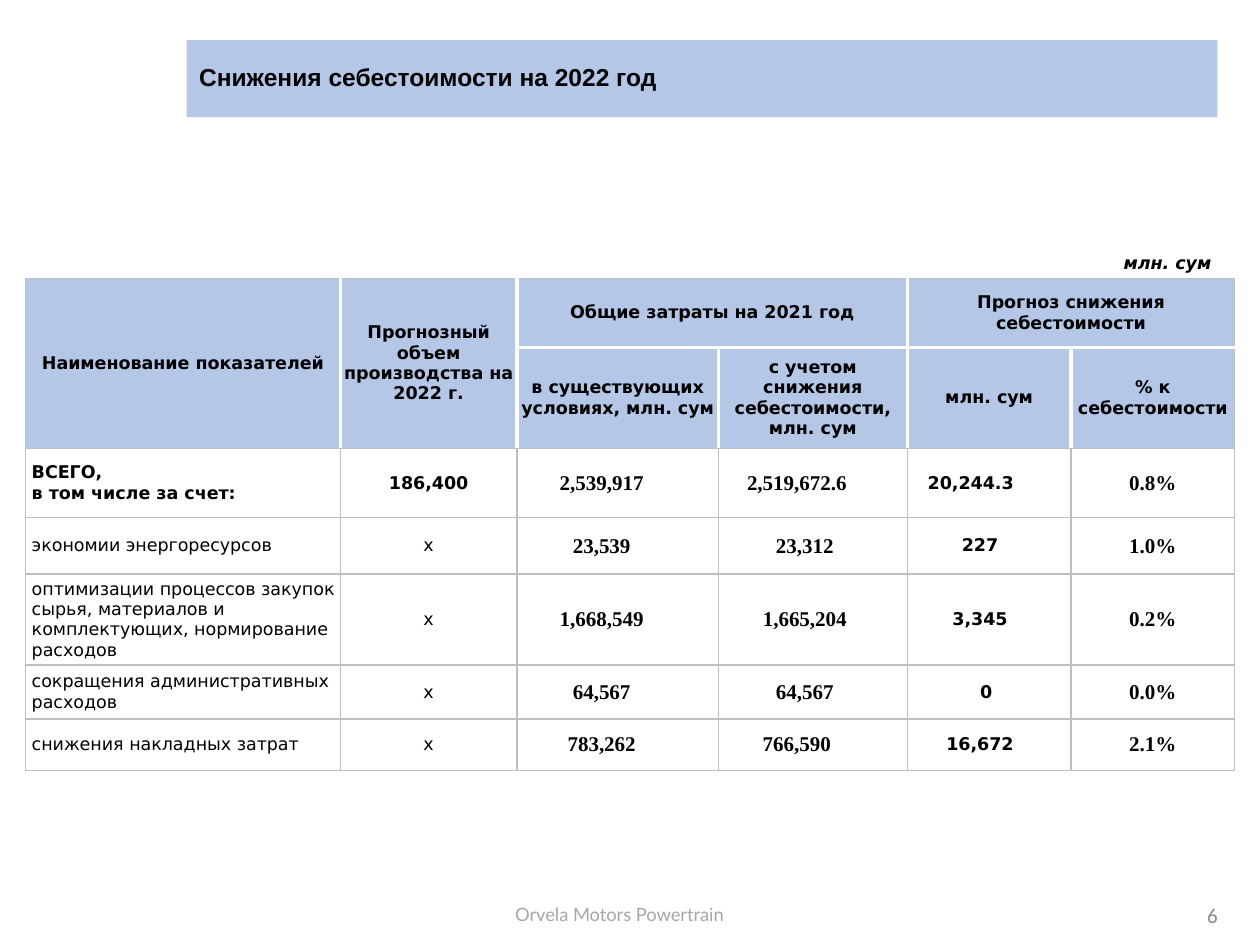
from pptx import Presentation
from pptx.dml.color import RGBColor
from pptx.enum.text import MSO_ANCHOR, MSO_AUTO_SIZE, PP_ALIGN as Align
from pptx.oxml.ns import qn
from pptx.util import Cm, Pt
from lxml.etree import SubElement

COLORS = {"header": "B4C7E7", "grid": "BFBFBF", "white": "FFFFFF",
          "text": "000000", "footer": "A6A6A6", "number": "8C8C8C"}
SANS, SERIF = "DejaVu Sans", "Times New Roman"
GRID, GAP = ("grid", 1), ("white", 2.25)

COLUMNS = [6.35, 3.56, 4.06, 3.81, 3.3, 3.3]
ROWS = [1.4, 2.03, 1.4, 1.14, 1.83, 1.09, 1.04]
HEADER_ROWS = 2
HEADERS = [
    ["Наименование показателей", "Прогнозный объем производства на 2022 г.",
     "Общие затраты на 2021 год", "", "Прогноз снижения себестоимости", ""],
    ["", "", "в существующих условиях, млн. сум",
     "с учетом снижения себестоимости, млн. сум", "млн. сум",
     "% к себестоимости"],
]
MERGES = [((0, 0), (1, 0)), ((0, 1), (1, 1)), ((0, 2), (0, 3)), ((0, 4), (0, 5))]
BODY = [
    ["ВСЕГО,\nв том числе за счет:", "186,400", "2,539,917", "2,519,672.6",
     "20,244.3", "0.8%"],
    ["экономии энергоресурсов", "х", "23,539", "23,312", "227", "1.0%"],
    ["оптимизации процессов закупок сырья, материалов и комплектующих, "
     "нормирование расходов", "х", "1,668,549", "1,665,204", "3,345", "0.2%"],
    ["сокращения административных расходов", "х", "64,567", "64,567", "0", "0.0%"],
    ["снижения накладных затрат", "х", "783,262", "766,590", "16,672", "2.1%"],
]
# Right cell margins (cm) that shift the centred figures to the left
INDENTS = [
    [0.13, 0, 0.64, 0.64, 0.74, 0],
    [0, 0, 0.64, 0.32, 0.37, 0],
    [0, 0, 0.64, 0.32, 0.37, 0],
    [0, 0, 0.64, 0.32, 0.12, 0],
    [0, 0, 0.64, 0.64, 0.37, 0],
]


class SlideBuilder:
    def __init__(self, prs):
        self.s = prs.slides.add_slide(prs.slide_layouts[5])

    def format(self, p, size, font, color="text", bold=False, italic=False,
               align=Align.CENTER):
        p.alignment = align
        f = p.font
        f.size, f.name, f.bold, f.italic = Pt(size), font, bold, italic
        f.color.rgb = RGBColor.from_string(COLORS[color])

    def fill(self, target, color):
        target.fill.solid()
        target.fill.fore_color.rgb = RGBColor.from_string(COLORS[color])

    def title(self, text, box):
        sp = self.s.shapes.title
        sp.left, sp.top, sp.width, sp.height = map(Cm, box)
        self.fill(sp, "header")
        tf = sp.text_frame
        tf.text = text
        tf.auto_size = MSO_AUTO_SIZE.NONE
        tf.vertical_anchor = MSO_ANCHOR.MIDDLE
        tf.paragraphs[0].line_spacing = 0.9
        self.format(tf.paragraphs[0], 14, "Arial", bold=True, align=Align.LEFT)

    def label(self, text, box, anchor=MSO_ANCHOR.MIDDLE, **style):
        tf = self.s.shapes.add_textbox(*map(Cm, box)).text_frame
        tf.word_wrap = True
        tf.vertical_anchor = anchor
        tf.text = text
        self.format(tf.paragraphs[0], **style)

    def borders(self, cell, sides):
        """Draw the cell's sides, given as left, right, top, bottom."""
        tc_pr = cell._tc.get_or_add_tcPr()
        for tag, (color, width) in zip(("a:lnL", "a:lnR", "a:lnT", "a:lnB"), sides):
            ln = SubElement(tc_pr, qn(tag), w=str(Pt(width)))
            SubElement(SubElement(ln, qn("a:solidFill")), qn("a:srgbClr"),
                       val=COLORS[color])

    def cell(self, cell, text, fill, sides, left=0, right=0, **style):
        self.borders(cell, sides)
        self.fill(cell, fill)
        cell.vertical_anchor = MSO_ANCHOR.MIDDLE
        cell.margin_left, cell.margin_right = Cm(left), Cm(right)
        cell.margin_top = cell.margin_bottom = 0
        p = cell.text_frame.paragraphs[0]
        p.text = text
        self.format(p, **style)

    def table(self, left, top):
        frame = self.s.shapes.add_table(
            len(ROWS), len(COLUMNS), Cm(left), Cm(top),
            Cm(sum(COLUMNS)), Cm(sum(ROWS)))
        table = frame.table
        table.first_row = table.horz_banding = False
        for column, width in zip(table.columns, COLUMNS):
            column.width = Cm(width)
        for row, height in zip(table.rows, ROWS):
            row.height = Cm(height)
        for start, end in MERGES:
            table.cell(*start).merge(table.cell(*end))
        self.header_cells(table)
        self.body_cells(table)

    def header_cells(self, table):
        """Part the header cells by white lines and frame them in grey."""
        for r, texts in enumerate(HEADERS):
            for c, text in enumerate(texts):
                cell = table.cell(r, c)
                if cell.is_spanned:
                    continue
                inner = (c > 0, c + cell.span_width < len(COLUMNS),
                         r > 0, r + cell.span_height < HEADER_ROWS)
                sides = [GAP if is_inner else GRID for is_inner in inner]
                self.cell(cell, text, "header", sides,
                          size=10, font=SANS, bold=True)

    def body_cells(self, table):
        for r, (texts, indents) in enumerate(zip(BODY, INDENTS)):
            for c, (text, indent) in enumerate(zip(texts, indents)):
                serif = c in (2, 3, 5)
                self.cell(table.cell(r + HEADER_ROWS, c), text, "white", [GRID] * 4,
                          left=0 if c else 0.13, right=indent if c else 0,
                          size=12 if serif else 10, font=SERIF if serif else SANS,
                          bold=r == 0 or c > 1,
                          align=Align.CENTER if c else Align.LEFT)


def main():
    prs = Presentation()
    prs.slide_width, prs.slide_height = Cm(25.4), Cm(19.05)
    b = SlideBuilder(prs)
    b.title("Снижения себестоимости на 2022 год", (3.76, 0.81, 20.78, 1.55))
    b.label("млн. сум", (22.28, 4.98, 2.51, 0.64),
            size=10, font=SANS, bold=True, italic=True)
    b.table(0.51, 5.61)
    b.label("Orvela Motors Powertrain", (9.63, 18.08, 5.72, 0.71),
            anchor=MSO_ANCHOR.TOP, size=10.5, font="Lato", color="footer")
    b.label("6", (19.08, 17.93, 5.72, 1.02), size=12, font="Calibri",
            color="number", align=Align.RIGHT)
    prs.save("out.pptx")


if __name__ == "__main__":
    main()
